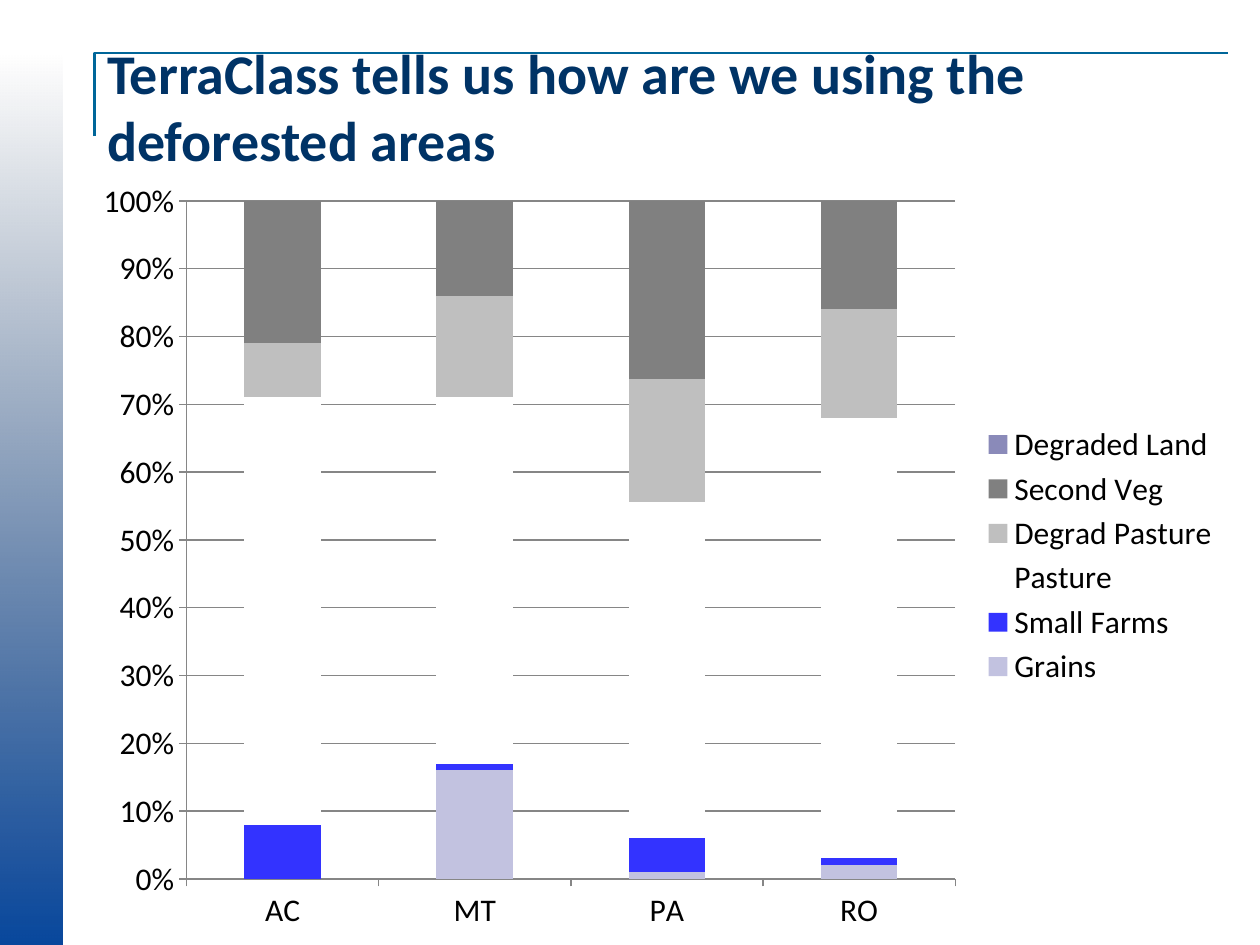
"""Build a slide with a stacked chart of land use in deforested areas by state."""
from lxml import etree
from pptx import Presentation
from pptx import util as u
from pptx.chart import data
from pptx.dml import color
from pptx.enum import chart as charts, shapes, text
from pptx.oxml import ns

COLORS = {
    "title": "003366", "frame": "006699", "bar_start": "08479C", "bar_end": "042148",
    "text": "000000", "axis": "868686", "Grains": "C2C2E0", "Small Farms": "3333FF",
    "Pasture": "FFFFFF", "Degrad Pasture": "BFBFBF", "Second Veg": "808080",
    "Degraded Land": "8A8AB9",
}
STATES = ["AC", "MT", "PA", "RO"]
LAND_USE = {
    "Grains": [0, 16, 1, 2],
    "Small Farms": [8, 1, 5, 1],
    "Pasture": [63, 54, 49, 65],
    "Degrad Pasture": [8, 15, 18, 16],
    "Second Veg": [21, 14, 26, 16],
    "Degraded Land": [0, 0, 0, 0],
}


def rgb(name):
    return color.RGBColor.from_string(COLORS[name])


presentation = Presentation()
presentation.slide_width, presentation.slide_height = u.Inches(10), u.Inches(7.5)
slide = presentation.slides.add_slide(presentation.slide_layouts[5])

side_bar = slide.shapes.add_shape(
    shapes.MSO_SHAPE.RECTANGLE, u.Inches(-3.29), u.Inches(3.71), u.Inches(7.08), u.Inches(0.5))
side_bar.rotation = 270
side_bar.shadow.inherit = False
side_bar.line.fill.background()
side_bar.fill.gradient()
side_bar.fill.gradient_angle = 0
for stop, name, position in zip(side_bar.fill.gradient_stops, ("bar_start", "bar_end"), (0, 1)):
    stop.color.rgb = rgb(name)
    stop.position = position
end_color = side_bar._element.xpath(".//a:gs/a:srgbClr")[-1]
etree.SubElement(end_color, ns.qn("a:alpha"), val="0")

builder = slide.shapes.build_freeform(u.Inches(0.75), u.Inches(1.08))
builder.add_line_segments(
    [(u.Inches(0.75), u.Inches(0.42)), (u.Inches(9.75), u.Inches(0.42))], close=False)
title_frame = builder.convert_to_shape()
title_frame.shadow.inherit = False
title_frame.fill.background()
title_frame.line.color.rgb = rgb("frame")
title_frame.line.width = u.Pt(1.5)

title = slide.shapes.title
title.left, title.top = u.Inches(0.75), u.Inches(0.42)
title.width, title.height = u.Inches(8.92), u.Inches(0.83)
title.text_frame.text = "TerraClass tells us how are we using the deforested areas"
title.text_frame.word_wrap = True
title.text_frame.auto_size = text.MSO_AUTO_SIZE.NONE
title.text_frame.vertical_anchor = text.MSO_ANCHOR.MIDDLE
paragraph = title.text_frame.paragraphs[0]
paragraph.alignment = text.PP_ALIGN.LEFT
paragraph.font.name = "Calibri"
paragraph.font.size = u.Pt(32)
paragraph.font.bold = True
paragraph.font.color.rgb = rgb("title")

chart_data = data.CategoryChartData(number_format="0")
chart_data.categories = STATES
for name, values in LAND_USE.items():
    chart_data.add_series(name, values)
chart = slide.shapes.add_chart(
    charts.XL_CHART_TYPE.COLUMN_STACKED_100, u.Inches(0.64), u.Inches(1.32),
    u.Inches(9.14), u.Inches(6.18), chart_data).chart
chart.has_title = False
chart.font.name = "Calibri"
chart.font.size = u.Pt(18)
chart.font.color.rgb = rgb("text")
chart.has_legend = True
chart.legend.position = charts.XL_LEGEND_POSITION.RIGHT
chart.legend.include_in_layout = False

plot = chart.plots[0]
plot.gap_width = 150
plot.overlap = 100
plot.vary_by_categories = False
for series in plot.series:
    series.format.fill.solid()
    series.format.fill.fore_color.rgb = rgb(series.name)

value_axis = chart.value_axis
value_axis.minimum_scale, value_axis.maximum_scale = 0, 1
value_axis.major_unit = 0.1
value_axis.has_major_gridlines = True
value_axis.tick_labels.number_format = "0%"
value_axis.tick_labels.number_format_is_linked = False
for axis in (chart.category_axis, value_axis):
    axis.major_tick_mark = charts.XL_TICK_MARK.OUTSIDE
for line in (chart.category_axis.format.line, value_axis.format.line,
             value_axis.major_gridlines.format.line):
    line.color.rgb = rgb("axis")
    line.width = u.Pt(0.75)

presentation.save("out.pptx")
